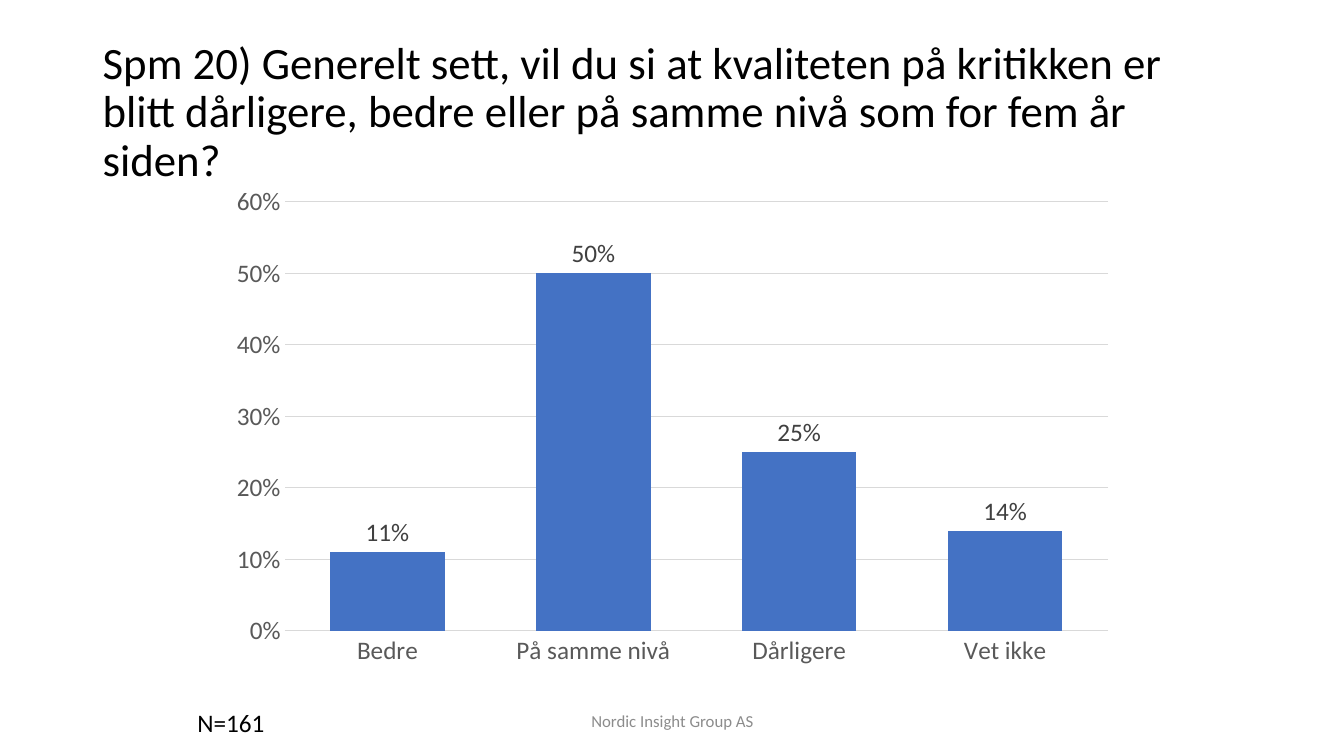
from pptx import Presentation
from pptx.chart.data import CategoryChartData
from pptx.dml.color import RGBColor
from pptx.enum.chart import (XL_CHART_TYPE as CHART, XL_LABEL_POSITION as LABEL,
                             XL_TICK_MARK as TICK)
from pptx.enum.text import MSO_ANCHOR as ANCHOR, MSO_AUTO_SIZE as AUTO, PP_ALIGN as ALIGN
from pptx.util import Inches, Pt

COLORS = {"text": "000000", "axis": "595959", "label": "404040",
          "grid": "D9D9D9", "bar": "4472C4", "footer": "8C8C8C"}


def rgb(name):
    return RGBColor.from_string(COLORS[name])


class SlideBuilder:
    def __init__(self, prs, font="Calibri"):
        self.s = prs.slides.add_slide(prs.slide_layouts[6])
        self.font = font

    def style(self, font, size, color):
        for key, value in {"name": self.font, "size": Pt(size), "bold": False}.items():
            setattr(font, key, value)
        font.color.rgb = rgb(color)

    def line(self, fmt, color):
        fmt.line.color.rgb = rgb(color)
        fmt.line.width = Pt(0.75)

    def text(self, box, text, size, color="text", align=ALIGN.LEFT, spacing=1.0, **frame):
        sp = self.s.shapes.add_textbox(*map(Inches, box))
        tf = sp.text_frame
        for key, value in {"word_wrap": True, **frame}.items():
            setattr(tf, key, value)
        p = tf.paragraphs[0]
        p.alignment, p.line_spacing = align, spacing
        r = p.add_run()
        r.text = text
        self.style(r.font, size, color)

    def column_chart(self, box, name, values, size=18):
        data = CategoryChartData(number_format="0%")
        data.categories = list(values)
        data.add_series(name, list(values.values()))
        chart = self.s.shapes.add_chart(CHART.COLUMN_CLUSTERED, *map(Inches, box), data).chart
        chart.has_legend = chart.has_title = False
        self.style(chart.font, size, "text")

        # Axes
        cat, val = chart.category_axis, chart.value_axis
        for axis in (cat, val):
            axis.major_tick_mark = axis.minor_tick_mark = TICK.NONE
            self.style(axis.tick_labels.font, size, "axis")
        self.line(cat.format, "grid")
        val.format.line.fill.background()
        self.line(val.major_gridlines.format, "grid")
        val.minimum_scale, val.maximum_scale, val.major_unit = 0, 0.6, 0.1
        val.tick_labels.number_format = "0%"
        val.tick_labels.number_format_is_linked = False

        # Columns and their labels
        plot = chart.plots[0]
        for key, value in {"gap_width": 80, "overlap": -27, "vary_by_categories": False}.items():
            setattr(plot, key, value)
        fill = plot.series[0].format.fill
        fill.solid()
        fill.fore_color.rgb = rgb("bar")
        labels = plot.series[0].data_labels
        for key, value in {"show_value": True, "number_format": "0%",
                           "number_format_is_linked": False,
                           "position": LABEL.OUTSIDE_END}.items():
            setattr(labels, key, value)
        self.style(labels.font, size, "label")


def main():
    prs = Presentation()
    prs.slide_width, prs.slide_height = Inches(13.33), Inches(7.5)
    slide = SlideBuilder(prs)

    # Question
    slide.text((0.92, 0.4, 11.5, 1.45),
               "Spm 20) Generelt sett, vil du si at kvaliteten på kritikken er blitt "
               "dårligere, bedre eller på samme nivå som for fem år siden?",
               32, spacing=0.9, vertical_anchor=ANCHOR.MIDDLE)

    # Answers
    slide.column_chart((2.17, 1.75, 9, 4.95), "Series 1",
                       {"Bedre": 0.11, "På samme nivå": 0.5, "Dårligere": 0.25, "Vet ikke": 0.14})

    # Footer and sample size
    slide.text((4.42, 6.95, 4.5, 0.4), "Nordic Insight Group AS", 12, "footer",
               ALIGN.CENTER, vertical_anchor=ANCHOR.MIDDLE)
    slide.text((1.86, 6.97, 0.87, 0.4), "N=161", 18,
               word_wrap=False, auto_size=AUTO.SHAPE_TO_FIT_TEXT)

    prs.save("out.pptx")


if __name__ == "__main__":
    main()
